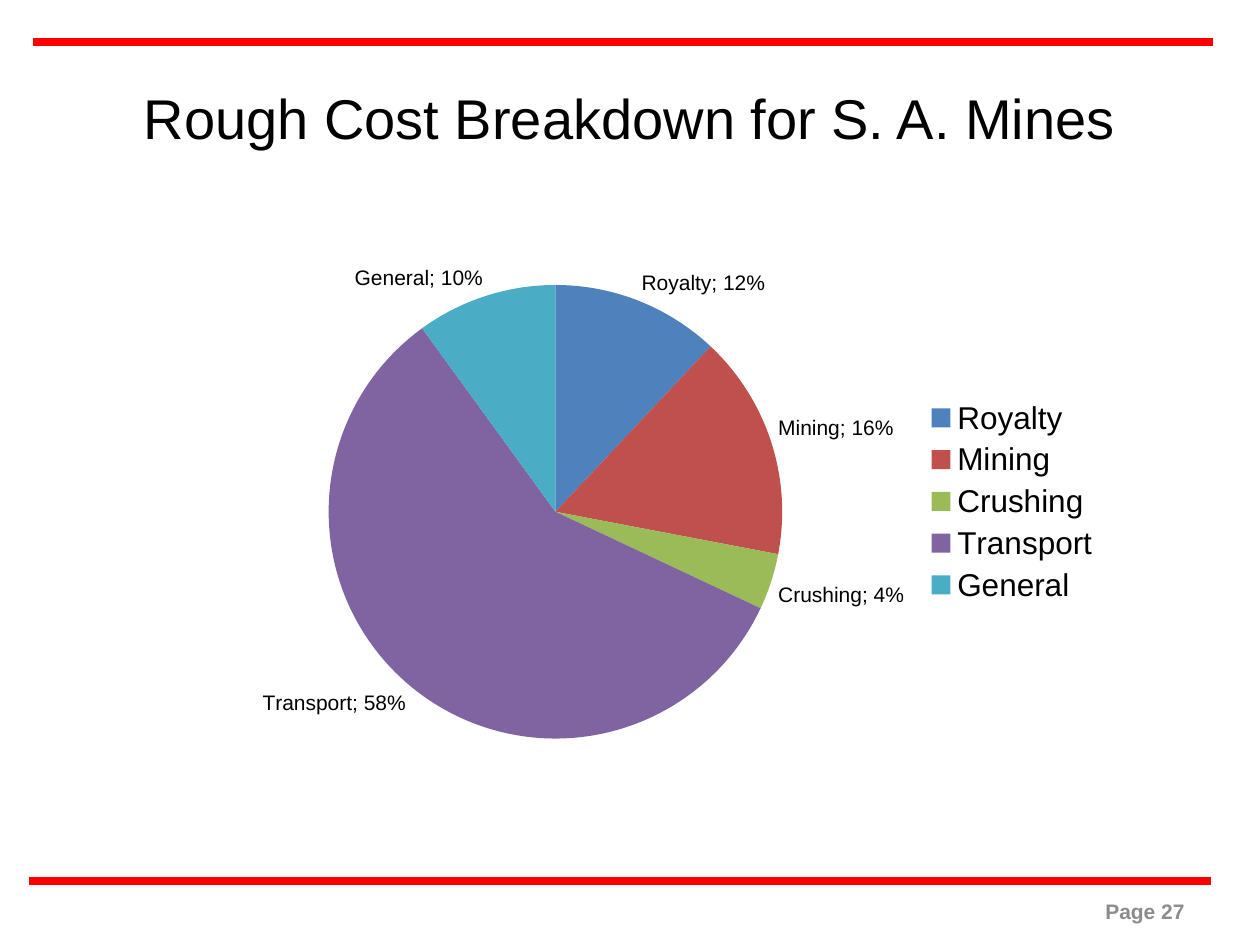
"""Build the mine cost breakdown slide with a pie chart."""
from dataclasses import dataclass

from lxml import etree
from pptx import Presentation
from pptx.chart.data import CategoryChartData
from pptx.dml.color import RGBColor
from pptx.enum.chart import XL_CHART_TYPE, XL_LABEL_POSITION, XL_LEGEND_POSITION
from pptx.enum.shapes import MSO_CONNECTOR
from pptx.enum.text import MSO_ANCHOR, PP_ALIGN
from pptx.oxml.ns import qn
from pptx.util import Emu, Pt

PIE = XL_CHART_TYPE.PIE
OUTSIDE = XL_LABEL_POSITION.OUTSIDE_END
LEGEND_RIGHT = XL_LEGEND_POSITION.RIGHT
STRAIGHT = MSO_CONNECTOR.STRAIGHT
MIDDLE = MSO_ANCHOR.MIDDLE
CENTER, RIGHT = PP_ALIGN.CENTER, PP_ALIGN.RIGHT
PX_PER_INCH = 126


@dataclass(frozen=True)
class Theme:
    font: str = "Arial"
    text: str = "000000"
    muted: str = "8C8C8C"
    rule: str = "FF0000"
    rule_width: float = 4.5
    title_size: int = 32
    legend_size: int = 18
    small_size: int = 12


COSTS = [
    ("Royalty", 0.12, "4F81BD"),
    ("Mining", 0.16, "C0504D"),
    ("Crushing", 0.04, "9BBB59"),
    ("Transport", 0.58, "8064A2"),
    ("General", 0.1, "4BACC6"),
]


def px(n):
    return Emu(round(n * 914400 / PX_PER_INCH))


def set_font(font, name, size, color, bold=False):
    font.name, font.size, font.bold = name, Pt(size), bold
    font.color.rgb = RGBColor.from_string(color)


def write(tf, text, *, font, size, color, align, bold=False):
    p = tf.paragraphs[0]
    p.alignment = align
    r = p.add_run()
    r.text = text
    set_font(r.font, font, size, color, bold)


class SlideBuilder:
    def __init__(self, slide, theme):
        self.slide, self.theme = slide, theme

    def rule(self, x1, x2, y):
        sp = self.slide.shapes.add_connector(STRAIGHT, px(x1), px(y), px(x2), px(y))
        sp.line.color.rgb = RGBColor.from_string(self.theme.rule)
        sp.line.width = Pt(self.theme.rule_width)
        etree.SubElement(sp._element.spPr, qn("a:effectLst"))

    def text(self, text, x, y, w, h, **style):
        tf = self.slide.shapes.add_textbox(px(x), px(y), px(w), px(h)).text_frame
        tf.word_wrap = True
        tf.vertical_anchor = MIDDLE
        write(tf, text, font=self.theme.font, **style)

    def pie(self, costs, x, y, w, h, plot):
        t = self.theme
        data = CategoryChartData(number_format="0%")
        data.categories = [name for name, _, _ in costs]
        data.add_series("Series 1", [value for _, value, _ in costs])
        chart = self.slide.shapes.add_chart(PIE, px(x), px(y), px(w), px(h), data).chart
        set_font(chart.font, t.font, t.legend_size, t.text)
        chart.has_title = False
        chart.has_legend = True
        chart.legend.position = LEGEND_RIGHT
        chart.legend.include_in_layout = False
        pie = chart.plots[0]
        pie.vary_by_categories = True
        for i, (_, _, color) in enumerate(costs):
            fill = pie.series[0].points[i].format.fill
            fill.solid()
            fill.fore_color.rgb = RGBColor.from_string(color)
        labels = pie.series[0].data_labels
        labels.show_value = labels.show_category_name = True
        labels.number_format, labels.number_format_is_linked = "0%", False
        labels.position = OUTSIDE
        set_font(labels.font, t.font, t.small_size, t.text)
        self.place_plot(chart, plot)

    def place_plot(self, chart, plot):
        area = chart._chartSpace.find(".//" + qn("c:plotArea"))
        for old in area.findall(qn("c:layout")):
            area.remove(old)
        layout = etree.Element(qn("c:layout"))
        area.insert(0, layout)
        manual = etree.SubElement(layout, qn("c:manualLayout"))
        settings = {"layoutTarget": "inner", "xMode": "edge", "yMode": "edge"}
        settings.update(zip("xywh", map(str, plot)))
        for name, value in settings.items():
            etree.SubElement(manual, qn(f"c:{name}")).set("val", value)


def main():
    prs = Presentation()
    prs.slide_width, prs.slide_height = px(1260), px(945)
    t = Theme()
    s = SlideBuilder(prs.slides.add_slide(prs.slide_layouts[6]), t)
    s.rule(33, 1213, 42)
    s.rule(29, 1211, 881)
    s.text("Rough Cost Breakdown for S. A. Mines", 63, 38, 1134, 158,
           size=t.title_size, color=t.text, align=CENTER)
    s.pie(COSTS, 168, 242, 945, 519, plot=(0.17, 0.08, 0.48, 0.88))
    s.text("Page 27", 903, 886, 294, 50,
           size=t.small_size, color=t.muted, align=RIGHT, bold=True)
    prs.save("out.pptx")


if __name__ == "__main__":
    main()
